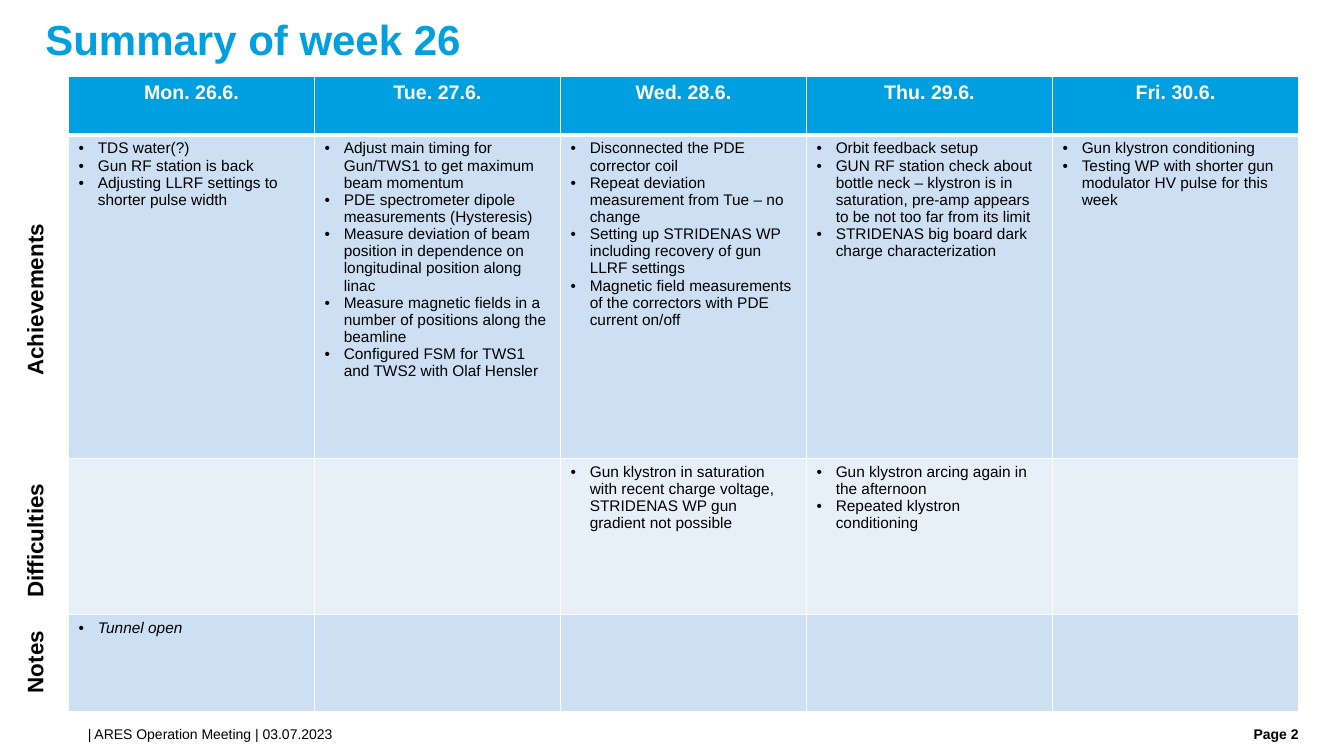
from dataclasses import dataclass

from pptx import Presentation
from pptx.dml.color import RGBColor
from pptx.enum.text import PP_ALIGN
from pptx.oxml import parse_xml
from pptx.oxml.ns import nsdecls
from pptx.util import Emu, Inches, Pt


@dataclass(frozen=True)
class Theme:
    font: str = "Arial"
    accent: str = "009FDF"
    ink: str = "000000"
    paper: str = "FFFFFF"
    band_dark: str = "CCDFF3"
    band_light: str = "E7F0F9"
    title_size: int = 30
    label_size: int = 16
    header_size: int = 14
    body_size: int = 11
    footer_size: int = 10
    thin_line: int = 1
    thick_line: int = 3


DAYS = ["Mon. 26.6.", "Tue. 27.6.", "Wed. 28.6.", "Thu. 29.6.", "Fri. 30.6."]

ACHIEVEMENTS = [
    ["TDS water(?)", "Gun RF station is back",
     "Adjusting LLRF settings to shorter pulse width"],
    ["Adjust main timing for Gun/TWS1 to get maximum beam momentum",
     "PDE spectrometer dipole measurements (Hysteresis)",
     "Measure deviation of beam position in dependence on longitudinal position along linac",
     "Measure magnetic fields in a number of positions along the beamline",
     "Configured FSM for TWS1 and TWS2 with Olaf Hensler"],
    ["Disconnected the PDE corrector coil",
     "Repeat deviation measurement from Tue – no change",
     "Setting up STRIDENAS WP including recovery of gun LLRF settings",
     "Magnetic field measurements of the correctors with PDE current on/off"],
    ["Orbit feedback setup",
     "GUN RF station check about bottle neck – klystron is in saturation, "
     "pre-amp appears to be not too far from its limit",
     "STRIDENAS big board dark charge characterization"],
    ["Gun klystron conditioning",
     "Testing WP with shorter gun modulator HV pulse for this week"],
]
DIFFICULTIES = [
    [], [],
    ["Gun klystron in saturation with recent charge voltage, "
     "STRIDENAS WP gun gradient not possible"],
    ["Gun klystron arcing again in the afternoon", "Repeated klystron conditioning"],
    [],
]
NOTES = [["Tunnel open"], [], [], [], []]


class WeekPage:
    """Draws on one blank page; all lengths are percentages of the page size."""

    def __init__(self, deck, theme):
        self.deck = deck
        self.theme = theme
        self.page = deck.slides.add_slide(deck.slide_layouts[6])

    def across(self, percent):
        return Emu(round(self.deck.slide_width * percent / 100))

    def down(self, percent):
        return Emu(round(self.deck.slide_height * percent / 100))

    def style(self, para, size, color, bold=False, italic=False, align=PP_ALIGN.LEFT):
        para.alignment = align
        font = para.font
        font.name, font.size = self.theme.font, Pt(size)
        font.bold, font.italic = bold, italic
        font.color.rgb = RGBColor.from_string(color)

    def text(self, words, left, top, width, height, size, color=None, **look):
        box = self.page.shapes.add_textbox(
            self.across(left), self.down(top), self.across(width), self.down(height))
        frame = box.text_frame
        frame.word_wrap = True
        frame.margin_left = frame.margin_right = frame.margin_top = frame.margin_bottom = 0
        frame.text = words
        self.style(frame.paragraphs[0], size, color or self.theme.ink, **look)
        return box

    def row_label(self, words, middle, length):
        """Add a label that reads upwards, centred at the height `middle`."""
        center, height = 2.58, 4.93
        box = self.text(words, center - length / 2, middle - height / 2, length, height,
                        self.theme.label_size, bold=True)
        box.rotation = 270
        frame = box.text_frame
        frame.word_wrap = False
        frame.margin_left = frame.margin_right = Inches(0.1)
        frame.margin_top = frame.margin_bottom = Inches(0.05)

    def table(self, left, top, width, row_heights, column_count):
        shape = self.page.shapes.add_table(
            len(row_heights), column_count, self.across(left), self.down(top),
            self.across(width), self.down(sum(row_heights)))
        table = shape.table
        table.first_row = table.horz_banding = False
        for row, height in zip(table.rows, row_heights):
            row.height = self.down(height)
        return table

    def paint_cell(self, cell, fill, top_line, bottom_line):
        thin = self.theme.thin_line
        borders = {"lnL": thin, "lnR": thin, "lnT": top_line, "lnB": bottom_line}
        properties = cell._tc.get_or_add_tcPr()
        for tag, points in borders.items():
            properties.append(parse_xml(
                f'<a:{tag} {nsdecls("a")} w="{Pt(points)}"><a:solidFill>'
                f'<a:srgbClr val="{self.theme.paper}"/></a:solidFill></a:{tag}>'))
        cell.fill.solid()
        cell.fill.fore_color.rgb = RGBColor.from_string(fill)

    def header_row(self, table, titles):
        theme = self.theme
        for cell, title in zip(table.rows[0].cells, titles):
            self.paint_cell(cell, theme.accent, theme.thin_line, theme.thick_line)
            cell.text_frame.text = title
            self.style(cell.text_frame.paragraphs[0], theme.header_size, theme.paper,
                       bold=True, align=PP_ALIGN.CENTER)

    def bullet_row(self, table, index, entries, fill, italic=False):
        theme = self.theme
        top_line = theme.thick_line if index == 1 else theme.thin_line
        for cell, items in zip(table.rows[index].cells, entries):
            self.paint_cell(cell, fill, top_line, theme.thin_line)
            cell.text_frame.text = "\n".join(items)
            for para in cell.text_frame.paragraphs:
                if items:
                    self.add_bullet(para)
                self.style(para, theme.body_size, theme.ink, italic=italic)

    def add_bullet(self, para):
        properties = para._p.get_or_add_pPr()
        indent = Inches(0.19)
        properties.set("marL", str(indent))
        properties.set("indent", str(-indent))
        properties.append(parse_xml(f'<a:buFont {nsdecls("a")} typeface="{self.theme.font}"/>'))
        properties.append(parse_xml(f'<a:buChar {nsdecls("a")} char="•"/>'))


def main():
    deck = Presentation()
    deck.slide_width, deck.slide_height = Inches(13.33), Inches(7.5)
    theme = Theme()
    week = WeekPage(deck, theme)

    title = week.text("Summary of week 26", 3.38, 2.53, 93.32, 6.53,
                      theme.title_size, theme.accent, bold=True)
    title.text_frame.paragraphs[0].line_spacing = 0.9

    table = week.table(5.1, 10.13, 91.52, [7.73, 42.8, 20.67, 12.8], len(DAYS))
    week.header_row(table, DAYS)
    week.bullet_row(table, 1, ACHIEVEMENTS, theme.band_dark)
    week.bullet_row(table, 2, DIFFICULTIES, theme.band_light)
    week.bullet_row(table, 3, NOTES, theme.band_dark, italic=True)

    for words, middle, length in [("Achievements", 39.53, 12.9),
                                  ("Difficulties", 71.4, 10.13),
                                  ("Notes", 87.53, 6.15)]:
        week.row_label(words, middle, length)

    week.text("| ARES Operation Meeting | 03.07.2023", 6.53, 96, 81.62, 2.67,
              theme.footer_size)
    week.text("Page 2", 88.97, 96, 7.65, 2.67, theme.footer_size,
              bold=True, align=PP_ALIGN.RIGHT)

    deck.save("out.pptx")


if __name__ == "__main__":
    main()
